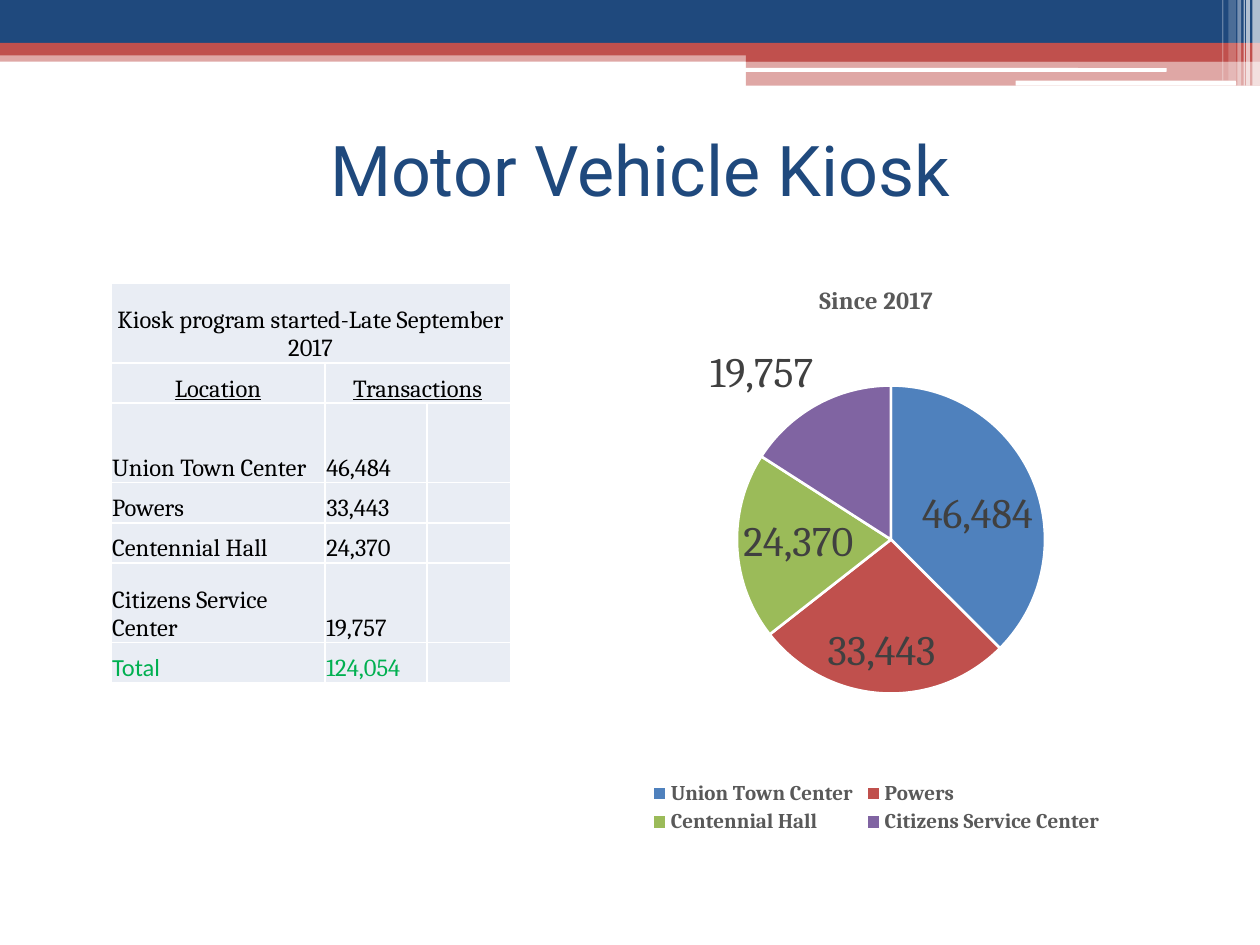
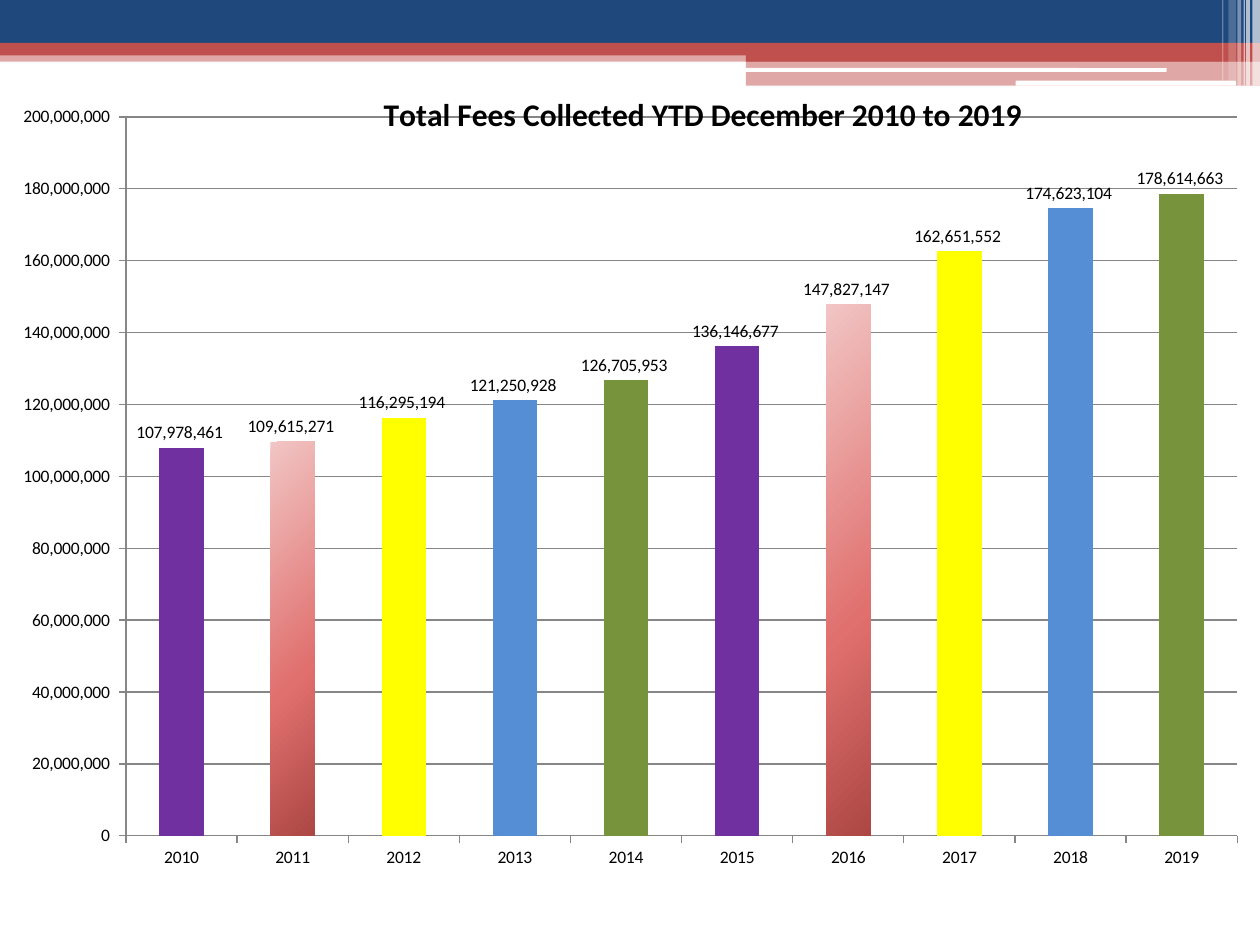
import pptx
import pptx.chart.data
import pptx.dml.color
import pptx.enum.chart
import pptx.enum.shapes
import pptx.enum.text
import pptx.oxml
import pptx.oxml.ns
import pptx.util
from pptx.dml.color import RGBColor
from pptx.util import Inches

NAVY = RGBColor(0x1F, 0x49, 0x7D)
RED = RGBColor(0xC0, 0x50, 0x4D)
WHITE = RGBColor(0xFF, 0xFF, 0xFF)
BLACK = RGBColor(0, 0, 0)
GREEN = RGBColor(0x00, 0xB0, 0x50)
CELL = RGBColor(0xE9, 0xED, 0xF4)
GREY = RGBColor(0x59, 0x59, 0x59)
DARK_GREY = RGBColor(0x40, 0x40, 0x40)
AXIS_GREY = RGBColor(0x86, 0x86, 0x86)
PIE_COLOURS = [RGBColor(0x4F, 0x81, 0xBD), RED,
               RGBColor(0x9B, 0xBB, 0x59), RGBColor(0x80, 0x64, 0xA2)]
ROSE_STOPS = [(0, "F1C5C4"), (60, "E0706E"), (100, "AC4744")]
YEAR_COLOURS = [RGBColor(0x70, 0x30, 0xA0), None, RGBColor(0xFF, 0xFF, 0),
                RGBColor(0x55, 0x8E, 0xD5), RGBColor(0x77, 0x93, 0x3C)]

BANDS = [
    (0, 0.4, 10, 0.09, RED, 50),
    (0, 0, 10, 0.34, NAVY, 100),
    (0, 0.34, 10, 0.1, RED, 100),
    (5.92, 0.39, 4.08, 0.1, RED, 100),
    (5.92, 0.48, 4.08, 0.2, RED, 50),
]
PILLS = [(5.91, 0.54, 3.35, 0.03), (8.06, 0.64, 1.75, 0.04)]
STRIPES = [(9.94, 0.06, 0.68, 65), (9.89, 0.03, 0.68, 65), (9.87, 0.01, 0.68, 60),
           (9.82, 0.03, 0.68, 40), (9.75, 0.06, 0.64, 20), (9.7, 0.01, 0.64, 30)]

KIOSKS = {"Union Town Center": 46484, "Powers": 33443,
          "Centennial Hall": 24370, "Citizens Service Center": 19757}
FEES = [107978461, 109615271, 116295194, 121250928, 126705953,
        136146677, 147827147, 162651552, 174623104, 178614663]
FEE_FORMAT = r"#,##0_);\(#,##0\)"

XL = pptx.enum.chart
SHAPE = pptx.enum.shapes.MSO_SHAPE
ALIGN = pptx.enum.text.PP_ALIGN
ANCHOR = pptx.enum.text.MSO_ANCHOR
qn = pptx.oxml.ns.qn


def xml(markup):
    head, tail = markup.split(">", 1) if "/>" not in markup.split(">", 1)[0] + ">" \
        else (markup[:-2], None)
    names = pptx.oxml.ns.nsdecls("a", "c")
    return pptx.oxml.parse_xml(f"{head} {names}/>" if tail is None
                               else f"{head} {names}>{tail}")


def style_font(font, name, size, colour, bold=False):
    font.name = name
    font.size = pptx.util.Pt(size)
    font.color.rgb = colour
    font.bold = bold


def place(parent, index, target, **fractions):
    for layout in parent.findall(qn("c:layout")):
        parent.remove(layout)
    modes = f'<c:layoutTarget val="{target}"/>' if target else ""
    modes += '<c:xMode val="edge"/><c:yMode val="edge"/>'
    values = "".join(f'<c:{key} val="{value}"/>' for key, value in fractions.items())
    parent.insert(index, xml(
        f"<c:layout><c:manualLayout>{modes}{values}</c:manualLayout></c:layout>"))


class Deck:
    def __init__(self):
        self.presentation = pptx.Presentation()
        self.presentation.slide_width = Inches(10)
        self.presentation.slide_height = Inches(7.5)
        self.slide = None

    def new_slide(self):
        self.slide = self.presentation.slides.add_slide(
            self.presentation.slide_layouts[6])
        for *box, colour, opacity in BANDS:
            self.block(box, colour, opacity)
        for box in PILLS:
            self.block(box, WHITE, kind=SHAPE.ROUNDED_RECTANGLE)
        for left, width, height, opacity in STRIPES:
            self.block((left, 0, width, height), WHITE, opacity)

    def block(self, box, colour, opacity=100, kind=SHAPE.RECTANGLE):
        block = self.slide.shapes.add_shape(kind, *map(Inches, box))
        block.shadow.inherit = False
        block.line.fill.background()
        block.fill.solid()
        block.fill.fore_color.rgb = colour
        if opacity < 100:
            tint = block.fill._xPr.find(".//" + qn("a:srgbClr"))
            tint.append(xml(f'<a:alpha val="{opacity * 1000}"/>'))

    def title(self, text):
        frame = self.slide.shapes.add_textbox(
            *map(Inches, (0.58, 0.75, 9, 1.17))).text_frame
        frame.word_wrap = True
        frame.vertical_anchor = ANCHOR.MIDDLE
        frame.text = text
        frame.paragraphs[0].alignment = ALIGN.CENTER
        style_font(frame.paragraphs[0].runs[0].font, "Roboto", 40, NAVY)

    def table(self, left, top, widths, heights, rows):
        table = self.slide.shapes.add_table(
            len(heights), len(widths), Inches(left), Inches(top),
            Inches(sum(widths)), Inches(sum(heights))).table
        for column, width in zip(table.columns, widths):
            column.width = Inches(width)
        for row, height in zip(table.rows, heights):
            row.height = Inches(height)
        for r, texts in enumerate(rows):
            for c, text in enumerate(texts):
                self.cell(table.cell(r, c), text)
        return table

    def cell(self, cell, text):
        cell.margin_left = cell.margin_right = cell.margin_top = Inches(0.01)
        cell.margin_bottom = 0
        cell.vertical_anchor = ANCHOR.BOTTOM
        cell.fill.solid()
        cell.fill.fore_color.rgb = CELL
        for index, side in enumerate(("lnL", "lnR", "lnT", "lnB")):
            cell._tc.tcPr.insert(index, xml(
                f'<a:{side} w="12700"><a:solidFill><a:srgbClr val="{WHITE}"/>'
                f"</a:solidFill></a:{side}>"))
        if text:
            cell.text_frame.text = text
            style_font(cell.text_frame.paragraphs[0].runs[0].font, "Cambria", 14, BLACK)

    def chart(self, kind, box, categories, values, title, fonts):
        data = pptx.chart.data.CategoryChartData()
        data.categories = categories
        data.add_series("Series 1", values)
        chart = self.slide.shapes.add_chart(kind, *map(Inches, box), data).chart
        face, title_size, title_colour = fonts
        style_font(chart.font, face, 10, BLACK)
        chart.has_legend = False
        chart.has_title = True
        heading = chart.chart_title.text_frame
        heading.text = title
        style_font(heading.paragraphs[0].runs[0].font, face, title_size, title_colour, True)
        return chart

    def value_labels(self, plot, number_format, position, *font):
        plot.has_data_labels = True
        labels = plot.data_labels
        labels.show_value = True
        labels.number_format = number_format
        labels.number_format_is_linked = False
        labels.position = position
        style_font(labels.font, *font)

    def pie(self, box, shares, title):
        chart = self.chart(XL.XL_CHART_TYPE.PIE, box, list(shares), list(shares.values()),
                           title, ("Cambria", 14, GREY))
        place(chart._chartSpace.chart.plotArea, 0, "inner", x=0.31, y=0.214, w=0.42, h=0.534)
        plot = chart.plots[0]
        plot.vary_by_categories = True
        for index, colour in enumerate(PIE_COLOURS):
            wedge = plot.series[0].points[index].format
            wedge.fill.solid()
            wedge.fill.fore_color.rgb = colour
            wedge.line.color.rgb = WHITE
            wedge.line.width = pptx.util.Pt(1.5)
        self.value_labels(plot, "#,##0", XL.XL_LABEL_POSITION.BEST_FIT,
                          "Cambria", 24, DARK_GREY)
        chart.has_legend = True
        chart.legend.position = XL.XL_LEGEND_POSITION.BOTTOM
        chart.legend.include_in_layout = False
        style_font(chart.legend.font, "Cambria", 12, GREY, True)

    def columns(self, box, categories, values, title):
        chart = self.chart(XL.XL_CHART_TYPE.COLUMN_CLUSTERED, box, categories, values,
                           title, ("Calibri", 18, BLACK))
        place(chart.chart_title._element, 1, None, x=0.3, y=0.028)
        place(chart._chartSpace.chart.plotArea, 0, "inner", x=0.1, y=0.064, w=0.882, h=0.853)
        plot = chart.plots[0]
        plot.gap_width = 150
        plot.vary_by_categories = False
        plot.series[0].invert_if_negative = False
        for index in range(len(values)):
            self.paint_bar(plot.series[0].points[index].format.fill,
                           YEAR_COLOURS[index % len(YEAR_COLOURS)])
        self.value_labels(plot, FEE_FORMAT, XL.XL_LABEL_POSITION.OUTSIDE_END,
                          "Calibri", 10, BLACK)
        fees = chart.value_axis
        fees.minimum_scale, fees.maximum_scale, fees.major_unit = 0, 200000000, 20000000
        fees.tick_labels.number_format = FEE_FORMAT
        fees.tick_labels.number_format_is_linked = False
        fees.major_gridlines.format.line.color.rgb = AXIS_GREY
        for axis in (fees, chart.category_axis):
            axis.major_tick_mark = XL.XL_TICK_MARK.OUTSIDE
            axis.format.line.color.rgb = AXIS_GREY
            style_font(axis.tick_labels.font, "Calibri", 10, BLACK)

    def paint_bar(self, fill, colour):
        if colour is not None:
            fill.solid()
            fill.fore_color.rgb = colour
            return
        fill.gradient()
        fill.gradient_angle = 315
        stops = fill._xPr.find(".//" + qn("a:gsLst"))
        for stop in list(stops):
            stops.remove(stop)
        for position, shade in ROSE_STOPS:
            stops.append(xml(f'<a:gs pos="{position * 1000}">'
                             f'<a:srgbClr val="{shade}"/></a:gs>'))


def kiosk_slide(deck):
    deck.new_slide()
    deck.title("Motor Vehicle Kiosk")
    rows = [["Kiosk program started-Late September 2017"], ["Location", "Transactions"]]
    rows += [[place_name, f"{count:,}"] for place_name, count in KIOSKS.items()]
    rows.append(["Total", f"{sum(KIOSKS.values()):,}"])
    tall, short = 0.63, 0.32
    table = deck.table(0.88, 2.25, [1.7, 0.81, 0.66],
                       [tall, short, tall, short, short, tall, short],
                       [row + [""] * (3 - len(row)) for row in rows])
    table.cell(0, 0).merge(table.cell(0, 2))
    table.cell(1, 1).merge(table.cell(1, 2))
    for r, c in ((0, 0), (1, 0), (1, 1)):
        heading = table.cell(r, c).text_frame.paragraphs[0]
        heading.alignment = ALIGN.CENTER
        heading.runs[0].font.underline = r == 1
    for c, face in enumerate(("Calibri", "Cambria")):
        total = table.cell(6, c).text_frame.paragraphs[0].runs[0]
        style_font(total.font, face, 14, GREEN)
    deck.pie((4.04, 2.08, 5.83, 4.58), KIOSKS, "Since 2017")


def fees_slide(deck):
    deck.new_slide()
    deck.columns((0, 0.5, 10, 6.69), [str(year) for year in range(2010, 2020)], FEES,
                 "Total Fees Collected YTD December 2010 to 2019")


def main():
    deck = Deck()
    kiosk_slide(deck)
    fees_slide(deck)
    deck.presentation.save("out.pptx")


if __name__ == "__main__":
    main()
